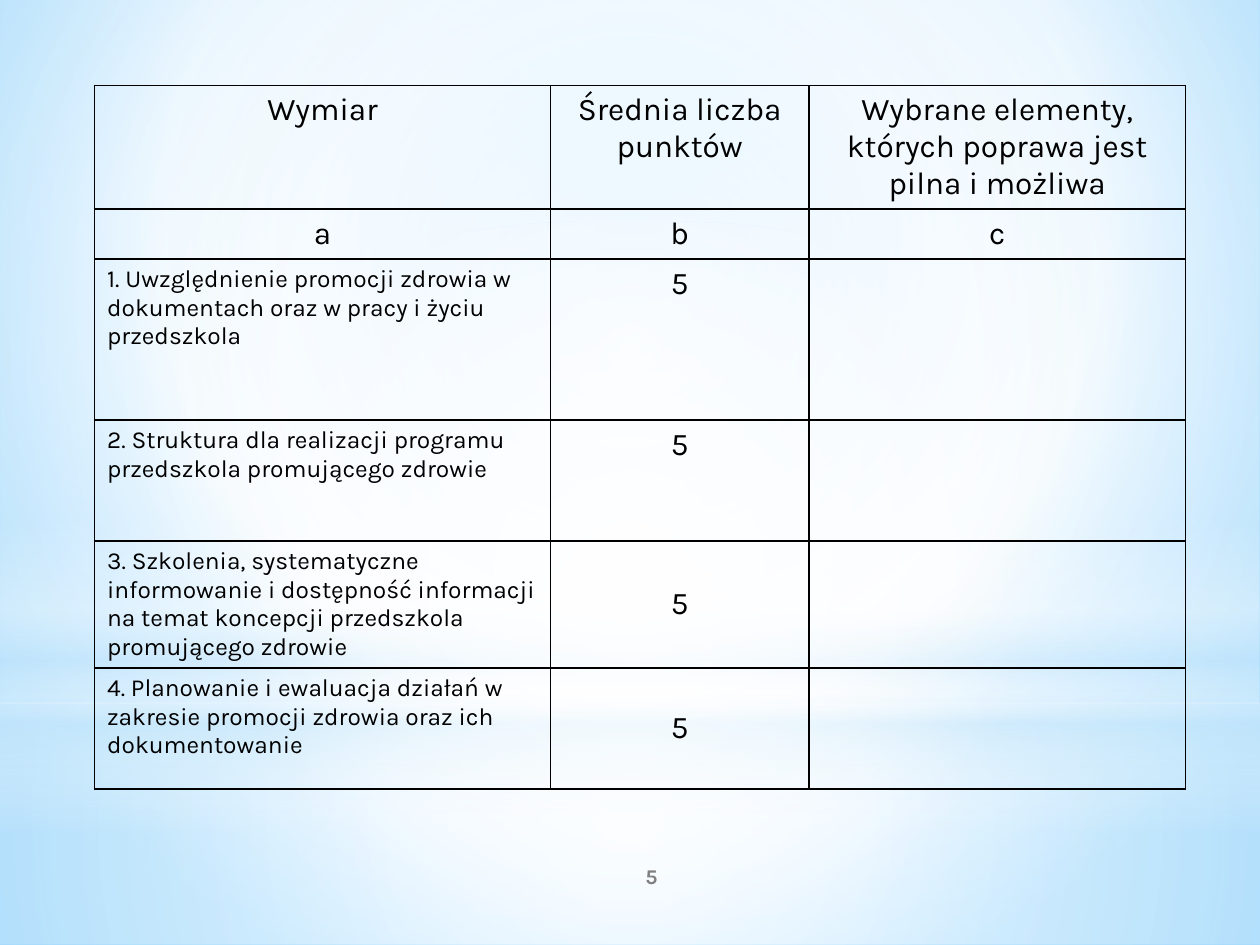
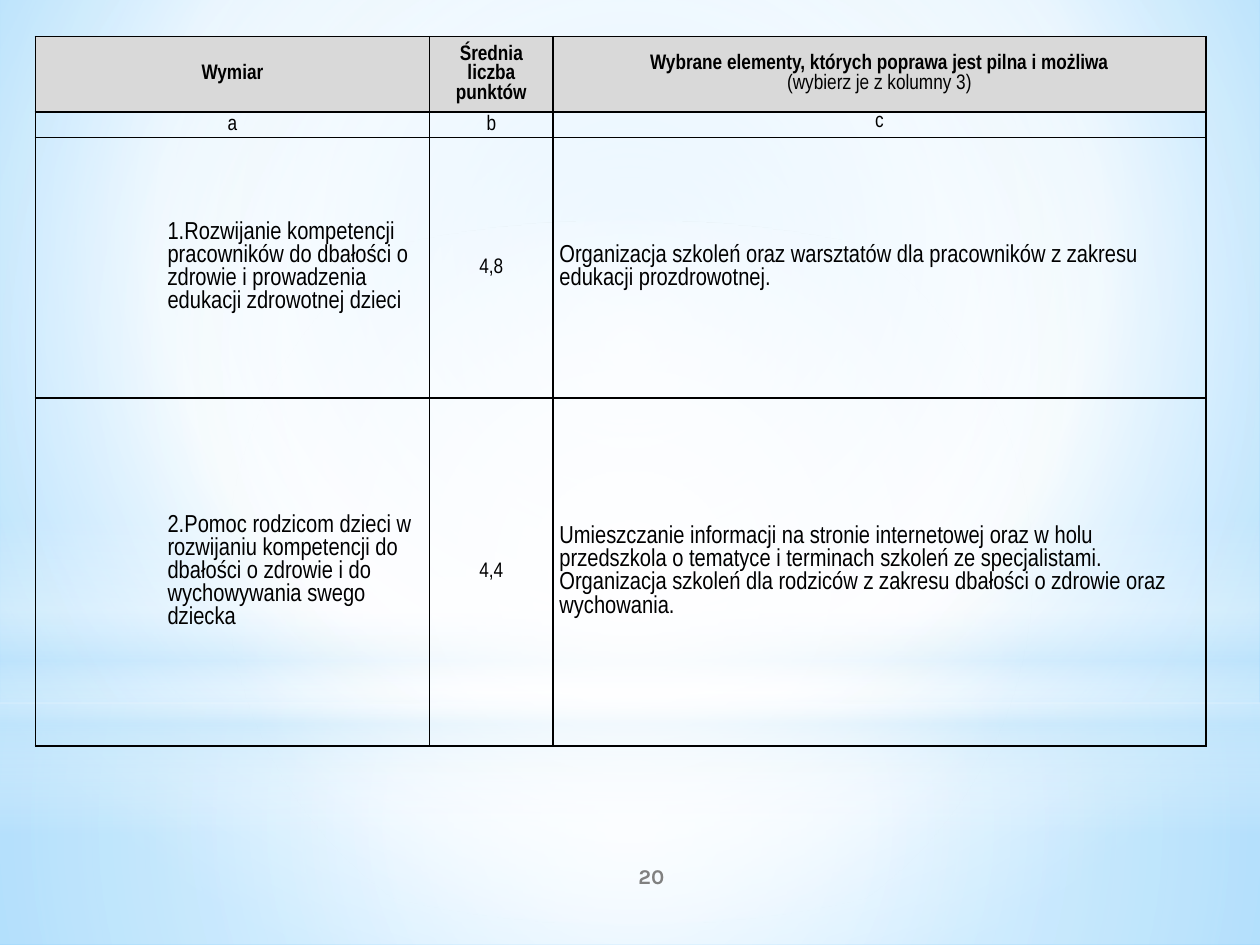
"""Builds two score-table slides on a shared soft blue background."""
import lxml.etree
import pptx
import pptx.dml.color
import pptx.enum.shapes
import pptx.enum.text
import pptx.oxml
import pptx.oxml.ns
import pptx.util

Inches = pptx.util.Inches
RGBColor = pptx.dml.color.RGBColor
CENTER = pptx.enum.text.PP_ALIGN.CENTER
LEFT = pptx.enum.text.PP_ALIGN.LEFT
TOP = pptx.enum.text.MSO_ANCHOR.TOP
MIDDLE = pptx.enum.text.MSO_ANCHOR.MIDDLE
RECTANGLE = pptx.enum.shapes.MSO_SHAPE.RECTANGLE
OVAL = pptx.enum.shapes.MSO_SHAPE.OVAL
NAMESPACE = pptx.oxml.ns.nsdecls("a")

BLACK = RGBColor(0x00, 0x00, 0x00)
GREY = RGBColor(0x80, 0x80, 0x80)
HEADER_GREY = RGBColor(0xD9, 0xD9, 0xD9)
WHITE = RGBColor(0xFF, 0xFF, 0xFF)
MIST = RGBColor(0xC6, 0xE7, 0xFC)
SKY = RGBColor(0xB0, 0xE0, 0xFF)
DEEP_SKY = RGBColor(0x6B, 0xC5, 0xFF)


def radial(left, top, right, bottom):
    """Return the XML of a circular gradient around the given focus."""
    edges = zip("ltrb", (left, top, right, bottom))
    focus = " ".join(f'{edge}="{percent * 1000}"' for edge, percent in edges)
    return f'<a:path path="circle"><a:fillToRect {focus}/></a:path>'


def paint_gradient(properties, stops, direction):
    """Replace the empty fill of the properties with a gradient."""
    stop_xml = "".join(
        f'<a:gs pos="{position * 1000}"><a:srgbClr val="{color}">'
        f'<a:alpha val="{opacity * 1000}"/></a:srgbClr></a:gs>'
        for position, color, opacity in stops)
    gradient = pptx.oxml.parse_xml(
        f'<a:gradFill {NAMESPACE} rotWithShape="1">'
        f"<a:gsLst>{stop_xml}</a:gsLst>{direction}</a:gradFill>")
    properties.replace(properties.find(pptx.oxml.ns.qn("a:noFill")), gradient)


CENTERED = radial(50, 50, 50, 50)
GLOWS = [
    (RECTANGLE, 5.58, 1.92, [(0, WHITE, 91), (37, WHITE, 76), (100, MIST, 79)], CENTERED),
    (RECTANGLE, 0, 5.58, [(0, WHITE, 89), (48, WHITE, 62), (100, MIST, 79)], CENTERED),
    (RECTANGLE, 4.12, 2.5,
     [(0, WHITE, 0), (29, WHITE, 30), (45, MIST, 40), (55, WHITE, 26), (65, MIST, 60),
      (100, WHITE, 0)], '<a:lin ang="5400000" scaled="0"/>'),
    (OVAL, 1.75, 5.58, [(0, WHITE, 100), (56, WHITE, 0)], CENTERED),
]

SCORE_TABLES = [
    {
        "page": "5", "left": 0.75, "top": 0.68, "font": "Karla", "size": 18,
        "columns": [3.62, 2.05, 2.99], "heights": [0.71, 0.39, 1.28, 0.96, 0.96, 0.96],
        "margins": (0.1, 0.05), "anchor": TOP, "other_anchor": [(4, 1), (5, 1)],
        "text_columns": [0], "indent": 0, "shaded_header": False,
        "rows": [
            ("Wymiar", "Średnia liczba\vpunktów",
             "Wybrane elementy, których poprawa jest pilna i możliwa"),
            ("a", "b", "c"),
            ("1. Uwzględnienie promocji zdrowia w\vdokumentach oraz w pracy i życiu "
             "przedszkola", "5", ""),
            ("2. Struktura dla realizacji programu przedszkola promującego zdrowie", "5", ""),
            ("3. Szkolenia, systematyczne\vinformowanie i dostępność informacji\v"
             "na temat koncepcji przedszkola\vpromującego zdrowie", "5", ""),
            ("4. Planowanie i ewaluacja działań w\vzakresie promocji zdrowia oraz ich\v"
             "dokumentowanie", "5", ""),
        ],
    },
    {
        "page": "20", "left": 0.28, "top": 0.29, "font": "Arial Narrow", "size": 12,
        "columns": [3.13, 0.98, 5.18], "heights": [0.6, 0.2, 2.07, 2.76],
        "margins": (0.05, 0), "anchor": MIDDLE, "other_anchor": [(1, 2)],
        "text_columns": [0, 2], "indent": 1, "shaded_header": True,
        "rows": [
            ("Wymiar", "Średnia liczba punktów",
             "Wybrane elementy, których poprawa jest pilna i możliwa\n"
             "(wybierz je z kolumny 3)"),
            ("a", "b", "c"),
            ("1.Rozwijanie kompetencji pracowników do dbałości o zdrowie i prowadzenia "
             "edukacji zdrowotnej dzieci", "4,8",
             "Organizacja szkoleń oraz warsztatów dla pracowników z zakresu edukacji "
             "prozdrowotnej."),
            ("2.Pomoc rodzicom dzieci w rozwijaniu kompetencji do dbałości o zdrowie i do "
             "wychowywania swego dziecka", "4,4",
             "Umieszczanie informacji na stronie internetowej oraz w holu przedszkola o "
             "tematyce i terminach szkoleń ze specjalistami. Organizacja szkoleń dla "
             "rodziców z zakresu dbałości o zdrowie oraz wychowania."),
        ],
    },
]

deck = pptx.Presentation()
deck.slide_width = Inches(10)
deck.slide_height = Inches(7.5)
master = deck.slide_master
master.background.fill.background()
paint_gradient(master.element.cSld.bg.bgPr,
               [(0, SKY, 100), (60, WHITE, 100), (100, DEEP_SKY, 100)],
               radial(20, 10, 20, 60))

for scores in SCORE_TABLES:
    slide = deck.slides.add_slide(deck.slide_layouts[6])
    for outline, top, height, stops, direction in GLOWS:
        glow = slide.shapes.add_shape(outline, 0, Inches(top), deck.slide_width, Inches(height))
        glow.shadow.inherit = False
        glow.line.fill.background()
        glow.fill.background()
        paint_gradient(glow.element.spPr, stops, direction)

    table = slide.shapes.add_table(
        len(scores["rows"]), len(scores["columns"]),
        Inches(scores["left"]), Inches(scores["top"]),
        Inches(sum(scores["columns"])), Inches(sum(scores["heights"]))).table
    table.first_row = False
    table.horz_banding = False
    for column, width in zip(table.columns, scores["columns"]):
        column.width = Inches(width)
    for row, height in zip(table.rows, scores["heights"]):
        row.height = Inches(height)

    side_margin, end_margin = scores["margins"]
    for row_index, row_texts in enumerate(scores["rows"]):
        for column_index, text in enumerate(row_texts):
            cell = table.cell(row_index, column_index)
            is_shaded = scores["shaded_header"] and row_index == 0
            is_description = row_index > 1 and column_index in scores["text_columns"]
            for side in "LRTB":
                cell._tc.get_or_add_tcPr().append(pptx.oxml.parse_xml(
                    f'<a:ln{side} {NAMESPACE} w="12700"><a:solidFill>'
                    f'<a:srgbClr val="{BLACK}"/></a:solidFill></a:ln{side}>'))
            if is_shaded:
                cell.fill.solid()
                cell.fill.fore_color.rgb = HEADER_GREY
            else:
                cell.fill.background()
            cell.margin_left = cell.margin_right = Inches(side_margin)
            cell.margin_top = cell.margin_bottom = Inches(end_margin)
            cell.vertical_anchor = scores["anchor"]
            if (row_index, column_index) in scores["other_anchor"]:
                cell.vertical_anchor = TOP if scores["anchor"] == MIDDLE else MIDDLE
            cell.text_frame.text = text
            for line_index, paragraph in enumerate(cell.text_frame.paragraphs):
                paragraph.alignment = LEFT if is_description else CENTER
                if is_description and column_index == 0:
                    properties = paragraph._p.get_or_add_pPr()
                    properties.set("marL", str(Inches(scores["indent"])))
                    properties.set("indent", "0")
                for run in paragraph.runs:
                    run.font.name = scores["font"]
                    run.font.size = pptx.util.Pt(14 if is_description else scores["size"])
                    run.font.bold = is_shaded and line_index == 0
                    run.font.color.rgb = BLACK

    page_number = slide.shapes.add_textbox(
        Inches(4.17), Inches(6.75), Inches(2), Inches(0.4)).text_frame
    page_number.word_wrap = True
    page_number.vertical_anchor = MIDDLE
    page_number.text = scores["page"]
    number_line = page_number.paragraphs[0]
    number_line.alignment = CENTER
    number_font = number_line.runs[0].font
    number_font.name = "Karla"
    number_font.size = pptx.util.Pt(12)
    number_font.bold = True
    number_font.color.rgb = GREY

deck.save("out.pptx")
